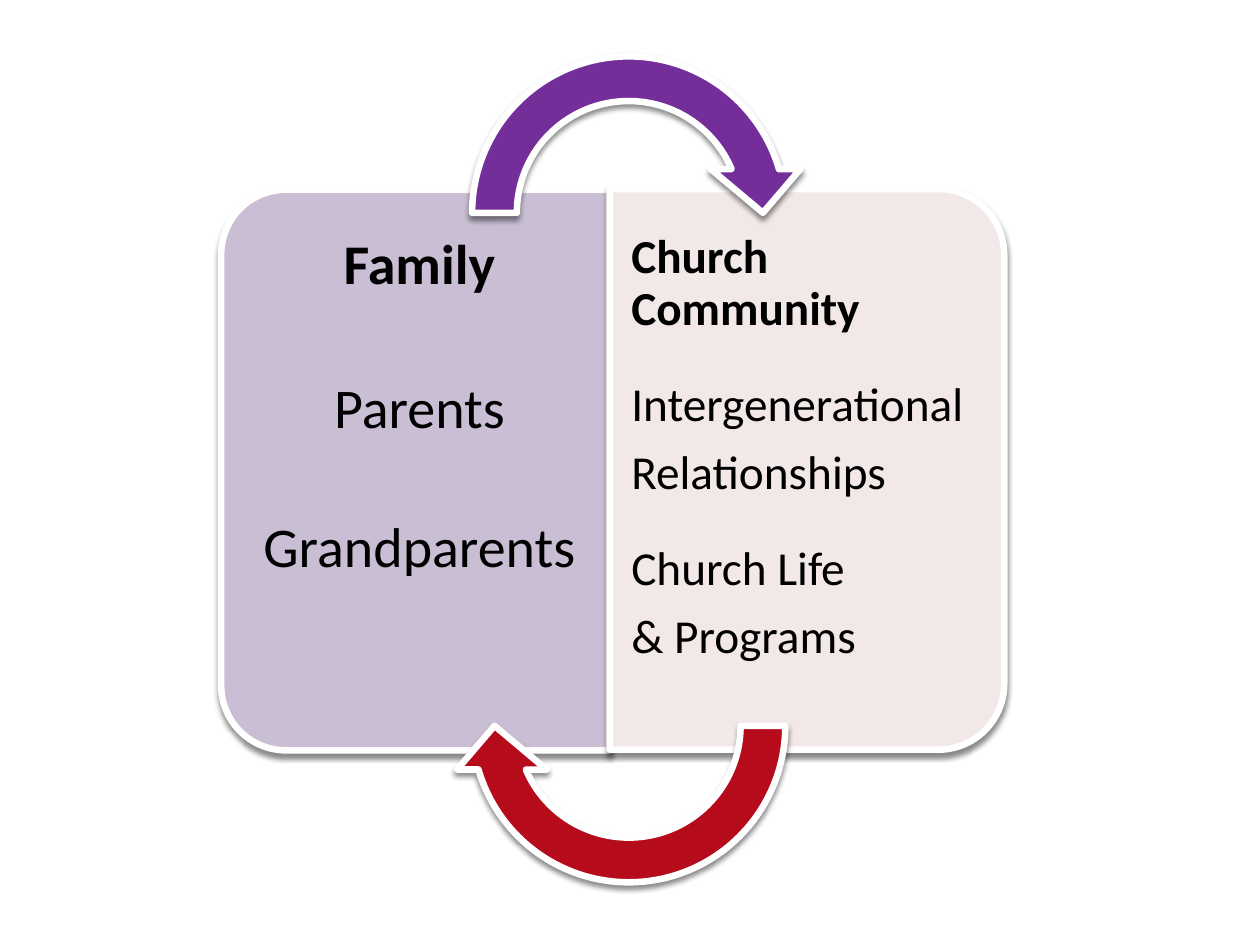
from dataclasses import dataclass

from lxml import etree
from pptx import Presentation
from pptx.dml.color import RGBColor
from pptx.enum.shapes import MSO_SHAPE
from pptx.enum.text import MSO_ANCHOR, PP_ALIGN
from pptx.oxml import parse_xml
from pptx.oxml.ns import nsdecls, qn
from pptx.util import Inches, Pt

PANEL, ARROW = MSO_SHAPE.ROUND_2_SAME_RECTANGLE, MSO_SHAPE.CIRCULAR_ARROW
LEFT, CENTER, TOP = PP_ALIGN.LEFT, PP_ALIGN.CENTER, MSO_ANCHOR.TOP
PANEL_ADJ = (0.167, 0)
ARROW_ADJ = (0.125, 11.42, 204.58, 108, 0.125)


@dataclass(frozen=True)
class Theme:
    """Colours, font and sizes of the slide."""
    font: str = "Calibri"
    text: str = "000000"
    outline: str = "FFFFFF"
    family: str = "C9BED4"
    church: str = "F3E8E8"
    purple: str = "732E9A"
    red: str = "B50B1B"
    outline_width: float = 3.75
    family_size: int = 32
    church_size: int = 27
    line_spacing: float = 0.9


@dataclass(frozen=True)
class Block:
    """A filled shape with its place and turn."""
    kind: int
    box: tuple[float, float, float, float]
    fill: str
    adjustments: tuple[float, ...]
    rotation: int = 0


@dataclass(frozen=True)
class Line:
    """A paragraph and the space after it in points."""
    text: str
    after: float = 0
    bold: bool = False


THEME = Theme()
PANELS = (
    Block(PANEL, (1.07, 2.19, 4.45, 3.08), THEME.family, PANEL_ADJ, 270),
    Block(PANEL, (4.18, 2.16, 4.45, 3.13), THEME.church, PANEL_ADJ, 90),
)
ARROWS = (
    Block(ARROW, (3.57, 0.27, 2.84, 2.84), THEME.purple, ARROW_ADJ),
    Block(ARROW, (3.57, 4.34, 2.84, 2.84), THEME.red, ARROW_ADJ, 180),
)
FAMILY = (Line("Family", 48, True), Line("Parents", 45), Line("Grandparents"))
CHURCH = (
    Line("Church Community", 26, True),
    Line("Intergenerational", 9.4),
    Line("Relationships", 26),
    Line("Church Life", 9.4),
    Line("& Programs"),
)


def add_shadow(sp) -> None:
    """Give a shape a soft shadow that falls straight down."""
    sp.shadow.inherit = False
    effects = sp._element.spPr.find(qn("a:effectLst"))
    shadow = parse_xml(
        f'<a:outerShdw {nsdecls("a")} blurRad="{Pt(3)}" dist="{Pt(2.4)}" '
        'dir="5400000" rotWithShape="0"/>')
    color = etree.SubElement(shadow, qn("a:srgbClr"), val="000000")
    etree.SubElement(color, qn("a:alpha"), val="45000")
    effects.append(shadow)


def add_block(s, block: Block) -> None:
    """Draw one panel or arrow."""
    sp = s.shapes.add_shape(block.kind, *map(Inches, block.box))
    sp.rotation = block.rotation
    for i, value in enumerate(block.adjustments):
        sp.adjustments[i] = value
    sp.fill.solid()
    sp.fill.fore_color.rgb = RGBColor.from_string(block.fill)
    sp.line.color.rgb = RGBColor.from_string(THEME.outline)
    sp.line.width = Pt(THEME.outline_width)
    add_shadow(sp)


def add_text(s, lines: tuple[Line, ...], *, box: tuple[float, ...],
             insets: tuple[float, ...], size: int, align: int) -> None:
    """Write a list of paragraphs in a text box."""
    tf = s.shapes.add_textbox(*map(Inches, box)).text_frame
    tf.word_wrap = True
    tf.vertical_anchor = TOP
    (tf.margin_left, tf.margin_top,
     tf.margin_right, tf.margin_bottom) = map(Inches, insets)
    for i, line in enumerate(lines):
        p = tf.add_paragraph() if i else tf.paragraphs[0]
        p.alignment = align
        p.line_spacing = THEME.line_spacing
        p.space_after = Pt(line.after)
        r = p.add_run()
        r.text = line.text
        r.font.name = THEME.font
        r.font.size = Pt(size)
        r.font.bold = line.bold
        r.font.color.rgb = RGBColor.from_string(THEME.text)


def main() -> None:
    """Build and save the slide."""
    prs = Presentation()
    prs.slide_width, prs.slide_height = Inches(10), Inches(7.5)
    s = prs.slides.add_slide(prs.slide_layouts[6])
    for panel in PANELS:
        add_block(s, panel)
    add_text(s, FAMILY, box=(1.9, 1.65, 2.93, 4.15),
             insets=(0.13, 0.22, 0.2, 0.22), size=THEME.family_size, align=CENTER)
    add_text(s, CHURCH, box=(4.84, 1.66, 2.98, 4.14),
             insets=(0.17, 0.19, 0.11, 0.19), size=THEME.church_size, align=LEFT)
    for arrow in ARROWS:
        add_block(s, arrow)
    prs.save("out.pptx")


if __name__ == "__main__":
    main()
